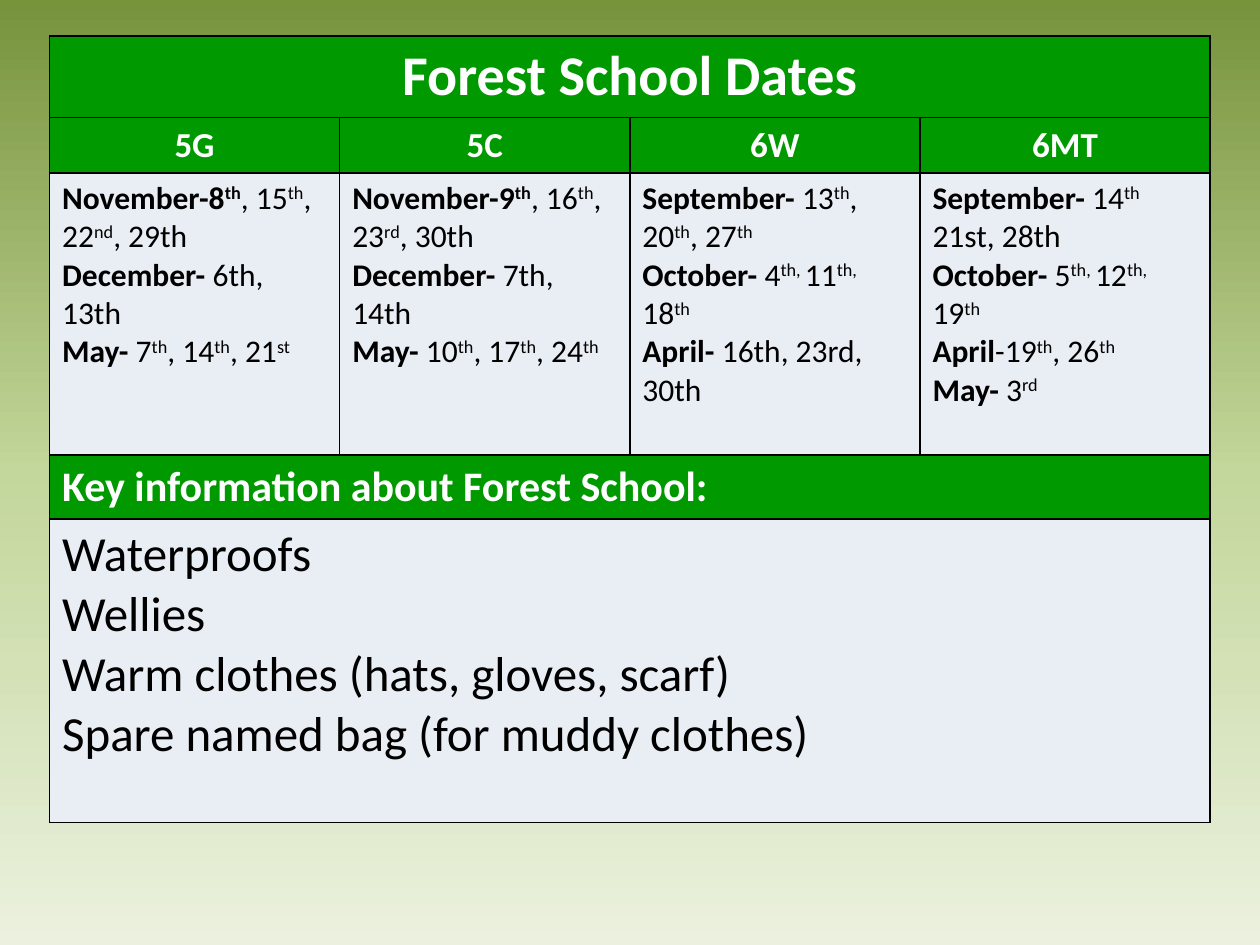
"""Build the Forest School dates slide."""
from copy import deepcopy

from pptx import Presentation
from pptx.dml.color import RGBColor
from pptx.enum.text import PP_ALIGN as Align
from pptx.oxml.ns import qn
from pptx.oxml.xmlchemy import OxmlElement as Element
from pptx.util import Pt

GREEN = RGBColor(0x00, 0x99, 0x00)
PALE = RGBColor(0xE9, 0xED, 0xF4)
WHITE = RGBColor(0xFF, 0xFF, 0xFF)
BLACK = RGBColor(0x00, 0x00, 0x00)
MOSS = RGBColor(0x77, 0x93, 0x3C)
LEAF = RGBColor(0xC3, 0xD6, 0x9B)
MIST = RGBColor(0xEB, 0xF1, 0xDE)

CLASS_DATES = {
    "5G": ["*November-8^th^*, 15^th^, 22^nd^, 29th",
           "*December- *6th, 13th",
           "*May-* 7^th^, 14^th^, 21^st^"],
    "5C": ["*November-9^th^*, 16^th^, 23^rd^, 30th",
           "*December- *7th, 14th",
           "*May-* 10^th^, 17^th^, 24^th^"],
    "6W": ["*September-* 13^th^, 20^th^, 27^th^",
           "*October-* 4^th, ^11^th, ^18^th^",
           "*April- *16th, 23rd, 30th"],
    "6MT": ["*September-* 14^th^",
            "21st, 28th",
            "*October-* 5^th, ^12^th, ^19^th^",
            "*April*-19^th^, 26^th^",
            "*May-* 3^rd^"],
}
KIT = ["Waterproofs", "Wellies", "Warm clothes (hats, gloves, scarf)",
       "Spare named bag (for muddy clothes)"]


def write(frame, lines, size=18, color=BLACK, align=Align.LEFT):
    """Write lines in which *stars* mark bold and ^carets^ mark superscript."""
    for number, line in enumerate(lines):
        paragraph = frame.add_paragraph() if number else frame.paragraphs[0]
        paragraph.alignment = align
        for weight, stretch in enumerate(line.split("*")):
            for level, words in enumerate(stretch.split("^")):
                if not words:
                    continue
                run = paragraph.add_run()
                run.text = words
                run.font.name = "Calibri"
                run.font.size = Pt(size)
                run.font.bold = weight % 2 == 1
                run.font.color.rgb = color
                if level % 2:
                    run.font._element.set("baseline", "30000")


class Sheet:
    """Hold the current slide and its style."""

    def __init__(self, slide, border=BLACK, border_width=1):
        self.slide = slide
        self.border = border
        self.border_width = border_width

    def backdrop(self, *colors):
        """Fill the background from top to bottom with evenly spaced colours."""
        fill = self.slide.background.fill
        fill.gradient()
        fill.gradient_angle = 270
        stops = self.slide.element.find(".//" + qn("a:gsLst"))
        for _ in colors[2:]:
            stops.append(deepcopy(stops[0]))
        for number, (stop, color) in enumerate(zip(fill.gradient_stops, colors)):
            stop.position = number / (len(colors) - 1)
            stop.color.rgb = color

    def table(self, left, top, column_width, columns, heights):
        """Add an empty table with the given row heights."""
        grid = self.slide.shapes.add_table(
            len(heights), columns, Pt(left), Pt(top),
            Pt(column_width * columns), Pt(sum(heights))).table
        for column in grid.columns:
            column.width = Pt(column_width)
        for row, height in zip(grid.rows, heights):
            row.height = Pt(height)
        return grid

    def outline(self, cell):
        """Draw the four borders of a cell."""
        properties = cell._tc.get_or_add_tcPr()
        for side in ("a:lnL", "a:lnR", "a:lnT", "a:lnB"):
            line = Element(side)
            line.set("w", str(Pt(self.border_width)))
            solid = Element("a:solidFill")
            color = Element("a:srgbClr")
            color.set("val", str(self.border))
            solid.append(color)
            line.append(solid)
            properties.append(line)

    def cell(self, cell, lines, fill, **style):
        """Style one cell and write its lines."""
        self.outline(cell)
        cell.fill.solid()
        cell.fill.fore_color.rgb = fill
        write(cell.text_frame, lines, **style)

    def band(self, row, lines, fill, **style):
        """Merge a whole row into one cell and write its lines."""
        first, *rest = row.cells
        first.merge(rest[-1])
        self.cell(first, lines, fill, **style)
        for covered in rest:
            self.cell(covered, [], fill)


def main():
    """Build and save the slide."""
    deck = Presentation()
    deck.slide_width, deck.slide_height = Pt(720), Pt(540)
    sheet = Sheet(deck.slides.add_slide(deck.slide_layouts[6]))
    sheet.backdrop(MOSS, LEAF, MIST)

    timetable = sheet.table(28.3, 20.7, 165.8, len(CLASS_DATES),
                            [46.1, 31.7, 161.2, 36.3, 173.6])
    title, classes, dates, heading, kit = timetable.rows
    sheet.band(title, ["*Forest School Dates*"], GREEN,
               size=32, color=WHITE, align=Align.CENTER)
    for head, body, (name, lines) in zip(classes.cells, dates.cells,
                                         CLASS_DATES.items()):
        sheet.cell(head, [f"*{name}*"], GREEN,
                   size=20, color=WHITE, align=Align.CENTER)
        sheet.cell(body, lines, PALE)
    sheet.band(heading, ["*Key information about Forest School:*"], GREEN,
               size=24, color=WHITE)
    sheet.band(kit, KIT, PALE, size=28)
    deck.save("out.pptx")


if __name__ == "__main__":
    main()
